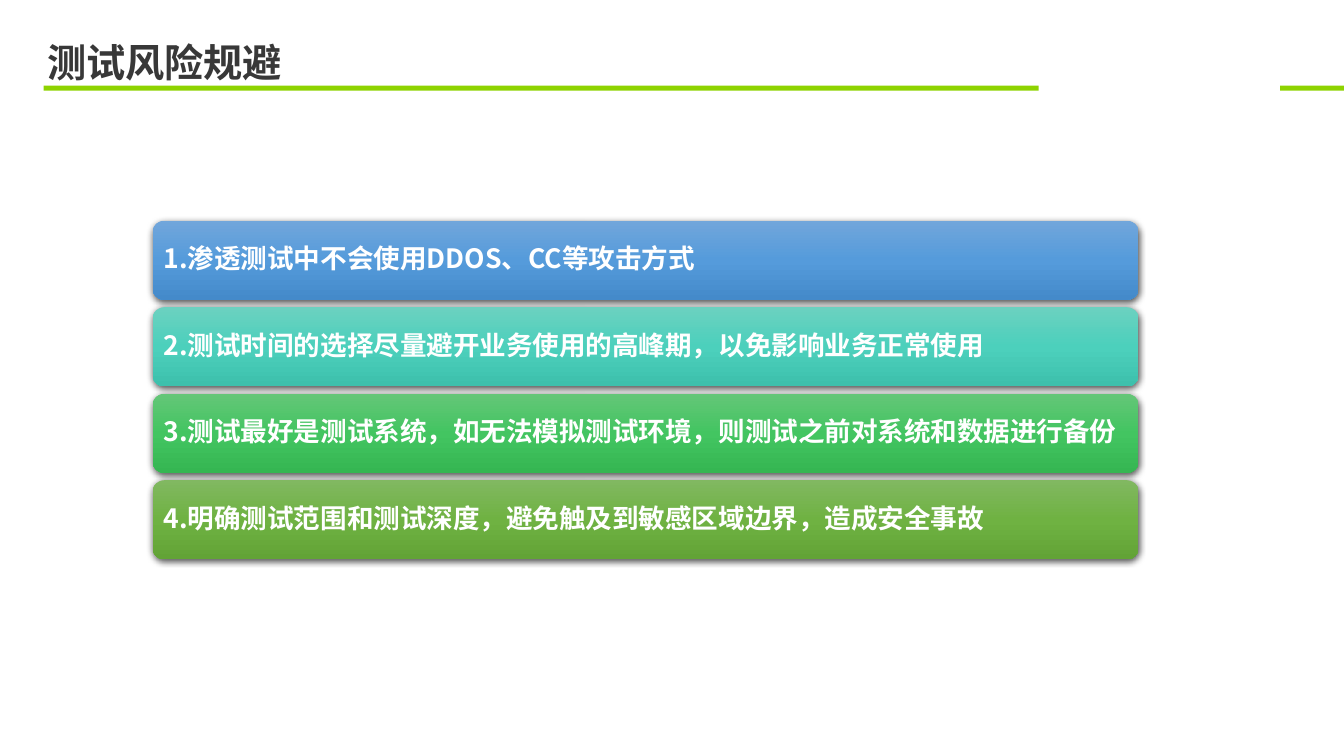
from copy import deepcopy

from lxml import etree
from pptx import Presentation
from pptx.dml.color import RGBColor
from pptx.enum.shapes import MSO_SHAPE
from pptx.enum.text import MSO_ANCHOR, MSO_AUTO_SIZE, PP_ALIGN
from pptx.oxml.ns import qn
from pptx.util import Pt

RECT, ROUNDED = MSO_SHAPE.RECTANGLE, MSO_SHAPE.ROUNDED_RECTANGLE
MIDDLE, LEFT, NO_FIT = MSO_ANCHOR.MIDDLE, PP_ALIGN.LEFT, MSO_AUTO_SIZE.NONE

FONT = "Noto Sans CJK SC"
WHITE = RGBColor(0xFF, 0xFF, 0xFF)
CHARCOAL = RGBColor(0x38, 0x38, 0x38)
LIME = RGBColor(0x8E, 0xD3, 0x00)
BLUES = RGBColor(0x71, 0xA6, 0xDB), RGBColor(0x55, 0x9B, 0xDB), RGBColor(0x44, 0x8A, 0xCA)
TEALS = RGBColor(0x6B, 0xD1, 0xC0), RGBColor(0x4C, 0xD0, 0xBC), RGBColor(0x3D, 0xC0, 0xAC)
GREENS = RGBColor(0x64, 0xC6, 0x78), RGBColor(0x43, 0xC5, 0x61), RGBColor(0x35, 0xB6, 0x52)
OLIVES = RGBColor(0x81, 0xB8, 0x61), RGBColor(0x6F, 0xB2, 0x42), RGBColor(0x62, 0xA3, 0x36)


class RiskSlide:
    """Holds the slide and its text style."""

    def __init__(self, slide):
        self.slide = slide

    def add_text(self, shape, text, size, color, inset_x, inset_y):
        frame = shape.text_frame
        frame.auto_size = NO_FIT
        frame.vertical_anchor = MIDDLE
        frame.margin_left = frame.margin_right = Pt(inset_x)
        frame.margin_top = frame.margin_bottom = Pt(inset_y)
        paragraph = frame.paragraphs[0]
        paragraph.alignment = LEFT
        paragraph.line_spacing = 0.9
        run = paragraph.add_run()
        run.text = text
        run.font.name, run.font.size, run.font.bold = FONT, Pt(size), True
        run.font.color.rgb = color
        east_asian = etree.SubElement(run.font._element, qn("a:ea"))
        east_asian.set("typeface", FONT)

    def title(self, text, left, top, width, height):
        heading = self.slide.shapes.title
        heading.left, heading.top = Pt(left), Pt(top)
        heading.width, heading.height = Pt(width), Pt(height)
        self.add_text(heading, text, 28, CHARCOAL, 7.2, 0)
        heading.text_frame.word_wrap = False
        heading.text_frame.paragraphs[0].line_spacing = 1.0

    def box(self, preset, left, top, width, height):
        box = self.slide.shapes.add_shape(preset, Pt(left), Pt(top), Pt(width), Pt(height))
        box.shadow.inherit = False
        box.line.fill.background()
        return box

    def rule(self, left, width):
        rule = self.box(RECT, left, 61.2, width, 3.6)
        rule.fill.solid()
        rule.fill.fore_color.rgb = LIME

    def bar(self, text, shades, left, top, width, height):
        bar = self.box(ROUNDED, left, top, width, height)
        bar.adjustments[0] = 0.15
        self.shade(bar, shades)
        self.cast_shadow(bar)
        self.add_text(bar, text, 19, WHITE, 5.4, 5.4)
        bar.text_frame.word_wrap = True

    def shade(self, bar, shades):
        bar.fill.gradient()
        bar.fill.gradient_angle = 270
        stops = bar._element.spPr.find(qn("a:gradFill")).find(qn("a:gsLst"))
        stops.insert(1, deepcopy(stops[0]))
        for stop, shade, position in zip(bar.fill.gradient_stops, shades, (0, 0.5, 1)):
            stop.color.rgb = shade
            stop.position = position

    def cast_shadow(self, bar):
        effects = bar._element.spPr.find(qn("a:effectLst"))
        shadow = etree.SubElement(effects, qn("a:outerShdw"), blurRad=str(Pt(4.5)),
                                  dist=str(Pt(1.5)), dir="5400000", algn="ctr", rotWithShape="0")
        black = etree.SubElement(shadow, qn("a:srgbClr"), val="000000")
        etree.SubElement(black, qn("a:alpha"), val="63000")


def main():
    deck = Presentation()
    deck.slide_width, deck.slide_height = Pt(960), Pt(540)
    page = RiskSlide(deck.slides.add_slide(deck.slide_layouts[5]))

    # Heading and its rules
    page.rule(31.2, 710.8)
    page.rule(914.4, 45.6)
    page.title("测试风险规避", 26.6, 23.8, 184.4, 41)

    # Ways to avoid risk, stacked at an equal pitch
    measures = [
        ("1.渗透测试中不会使用DDOS、CC等攻击方式", BLUES),
        ("2.测试时间的选择尽量避开业务使用的高峰期，以免影响业务正常使用", TEALS),
        ("3.测试最好是测试系统，如无法模拟测试环境，则测试之前对系统和数据进行备份", GREENS),
        ("4.明确测试范围和测试深度，避免触及到敏感区域边界，造成安全事故", OLIVES),
    ]
    for row, (measure, shades) in enumerate(measures):
        page.bar(measure, shades, 109, 157.6 + row * 61.8, 704.4, 56.6)

    deck.save("out.pptx")


if __name__ == "__main__":
    main()
